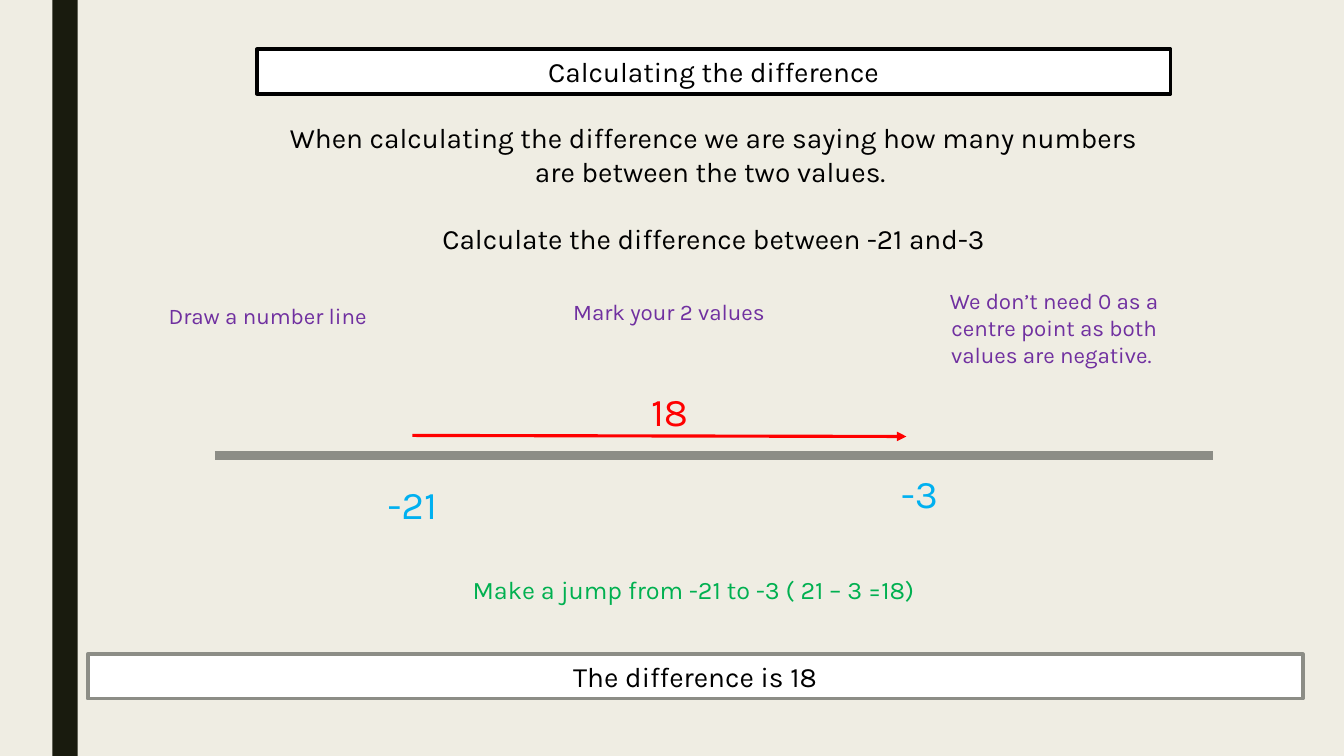
from dataclasses import dataclass

from lxml.etree import SubElement
from pptx import Presentation
from pptx.dml.color import RGBColor
from pptx.enum.shapes import MSO_CONNECTOR, MSO_SHAPE
from pptx.enum.text import MSO_ANCHOR, MSO_AUTO_SIZE, PP_ALIGN
from pptx.oxml.ns import qn
from pptx.util import Inches, Pt


@dataclass(frozen=True)
class Theme:
    font: str = "Karla"
    background: str = "EFEDE3"
    band: str = "191B0E"
    paper: str = "FFFFFF"
    ink: str = "000000"
    grey: str = "8C8D86"
    step: str = "7030A0"
    value: str = "00B0F0"
    jump: str = "FF0000"
    working: str = "00B050"
    body_size: int = 20
    working_size: int = 18
    step_size: int = 16
    value_size: int = 28
    border: float = 2.75
    axis_width: float = 6
    arrow_width: float = 2.25


class Builder:
    """Draws styled elements on the current slide."""

    def __init__(self, prs, theme):
        self.theme = theme
        self.s = prs.slides.add_slide(prs.slide_layouts[6])
        fill = self.s.background.fill
        fill.solid()
        fill.fore_color.rgb = RGBColor.from_string(theme.background)

    def add_text(self, sp, text, size, color):
        tf = sp.text_frame
        tf.word_wrap = True
        tf.auto_size = MSO_AUTO_SIZE.SHAPE_TO_FIT_TEXT
        tf.vertical_anchor = MSO_ANCHOR.TOP
        p = tf.paragraphs[0]
        p.alignment = PP_ALIGN.CENTER
        r = p.add_run()
        r.text = text
        r.font.name = self.theme.font
        r.font.size = Pt(size)
        r.font.color.rgb = RGBColor.from_string(color)

    def rect(self, box, fill, border=None):
        sp = self.s.shapes.add_shape(MSO_SHAPE.RECTANGLE, *map(Inches, box))
        sp.shadow.inherit = False
        sp.fill.solid()
        sp.fill.fore_color.rgb = RGBColor.from_string(fill)
        if border:
            sp.line.color.rgb = RGBColor.from_string(border)
            sp.line.width = Pt(self.theme.border)
        else:
            sp.line.fill.background()
        return sp

    def banner(self, box, text, border):
        sp = self.rect(box, self.theme.paper, border)
        self.add_text(sp, text, self.theme.body_size, self.theme.ink)

    def text(self, box, text, size, color):
        sp = self.s.shapes.add_textbox(*map(Inches, box))
        self.add_text(sp, text, size, color)

    def line(self, start, end, color, width, arrow=False):
        cx = self.s.shapes.add_connector(
            MSO_CONNECTOR.STRAIGHT, *map(Inches, start + end))
        cx.line.color.rgb = RGBColor.from_string(color)
        cx.line.width = Pt(width)
        props = cx._element.spPr
        if arrow:
            SubElement(props.find(qn("a:ln")), qn("a:tailEnd"), type="triangle")
        SubElement(props, qn("a:effectLst"))


def main():
    prs = Presentation()
    prs.slide_width, prs.slide_height = Inches(13.33), Inches(7.5)
    t = Theme()
    b = Builder(prs, t)

    b.rect((0.52, 0, 0.25, 7.5), t.band)
    b.banner((2.55, 0.49, 9.06, 0.44), "Calculating the difference", t.ink)
    for top, height, text in (
        (1.15, 0.77, "When calculating the difference we are saying how many "
                     "numbers are between the two values. "),
        (2.15, 0.44, "Calculate the difference between -21 and-3"),
    ):
        b.text((2.55, top, 9.06, height), text, t.body_size, t.ink)

    for left, top, height, text in (
        (1.5, 2.95, 0.37, "Draw a number line"),
        (5.48, 2.91, 0.37, "Mark your 2 values"),
        (9.3, 2.8, 0.91, "We don’t need 0 as a centre point as both "
                         "values are negative. "),
    ):
        b.text((left, top, 2.31, height), text, t.step_size, t.step)

    b.line((2.13, 4.52), (12.03, 4.52), t.grey, t.axis_width)
    b.line((4.09, 4.32), (8.99, 4.33), t.jump, t.arrow_width, arrow=True)
    for left, top, text, color in (
        (3.65, 4.72, "-21", t.value),
        (8.68, 4.61, "-3", t.value),
        (6.2, 3.79, "18", t.jump),
    ):
        b.text((left, top, 0.88, 0.57), text, t.value_size, color)

    b.text((1.93, 5.65, 9.9, 0.4), "Make a jump from -21 to -3 ( 21 – 3 =18)",
           t.working_size, t.working)
    b.banner((0.87, 6.49, 12.05, 0.44), "The difference is 18", t.grey)
    prs.save("out.pptx")


if __name__ == "__main__":
    main()
